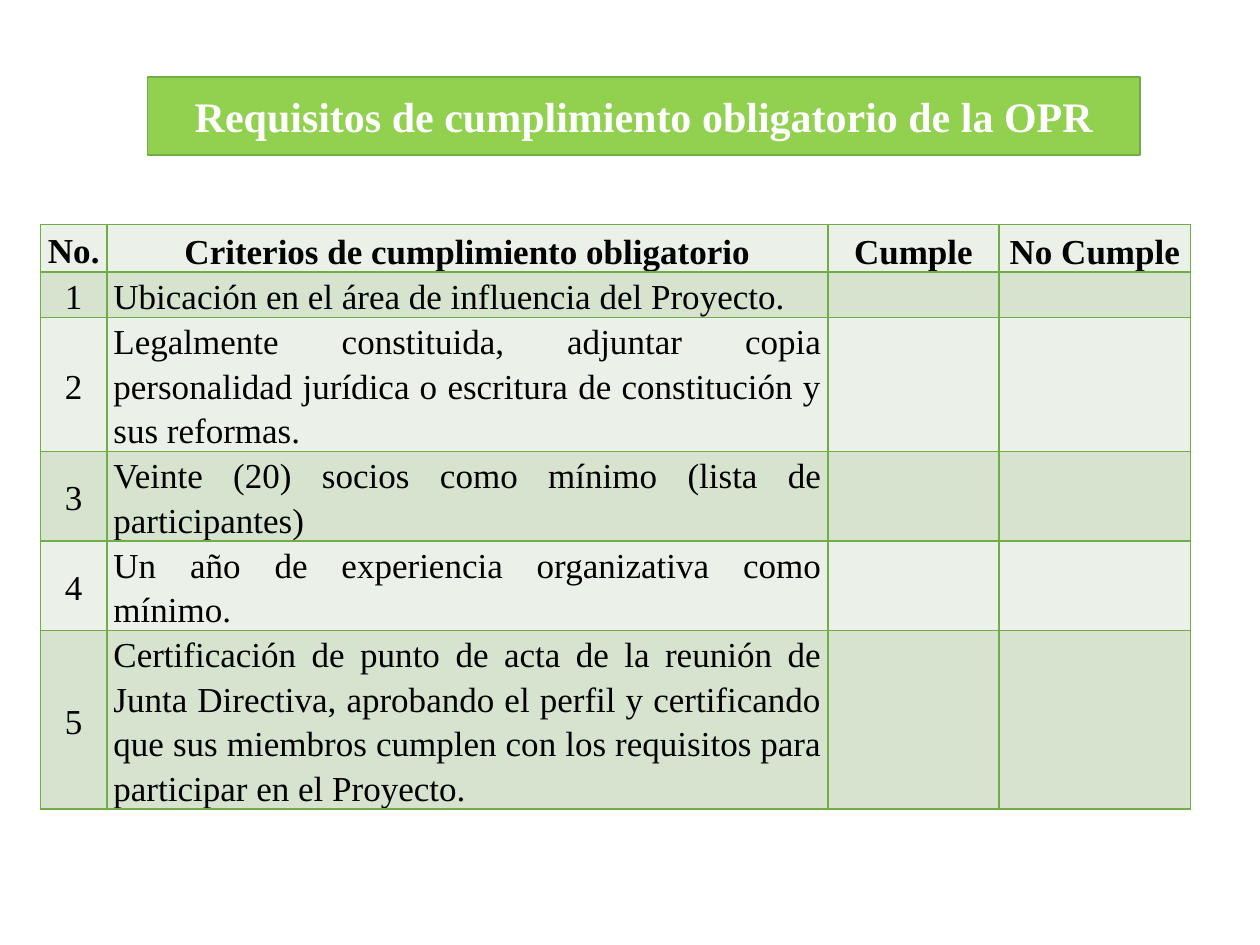
from lxml import etree
from pptx import Presentation
from pptx.dml.color import RGBColor
from pptx.enum import text as t
from pptx.oxml.ns import qn
from pptx.util import Inches, Pt

FONT = "Times New Roman"
BLACK = RGBColor(0x00, 0x00, 0x00)
WHITE = RGBColor(0xFF, 0xFF, 0xFF)
LIME = RGBColor(0x92, 0xD0, 0x50)
GREEN = RGBColor(0x70, 0xAD, 0x47)
PALE = RGBColor(0xEB, 0xF1, 0xE9)
SAGE = RGBColor(0xD5, 0xE3, 0xCF)

CENTER, JUSTIFY = t.PP_ALIGN.CENTER, t.PP_ALIGN.JUSTIFY
MIDDLE, BOTTOM = t.MSO_ANCHOR.MIDDLE, t.MSO_ANCHOR.BOTTOM

WIDTHS = [0.53, 5.72, 1.36, 1.52]
HEIGHTS = [0.38, 0.36, 1.06, 0.71, 0.71, 1.41]
HEADS = ["No.", "Criterios de cumplimiento obligatorio", "Cumple", "No Cumple"]
RULES = [
    "Ubicación en el área de influencia del Proyecto.",
    "Legalmente constituida, adjuntar copia personalidad jurídica o "
    "escritura de constitución y sus reformas.",
    "Veinte (20) socios como mínimo (lista de participantes)",
    "Un año de experiencia organizativa como mínimo.",
    "Certificación de punto de acta de la reunión de Junta Directiva, "
    "aprobando el perfil y certificando que sus miembros cumplen con los "
    "requisitos para participar en el Proyecto.",
]


def write(frame, words, size=20, color=BLACK, bold=False, align=CENTER,
          lead=None, after=None):
    para = frame.paragraphs[0]
    para.alignment = align
    para.line_spacing = lead
    if after is not None:
        para.space_after = Pt(after)
    run = para.add_run()
    run.text = words
    font = run.font
    font.name, font.size, font.bold = FONT, Pt(size), bold
    font.color.rgb = color


def edge(cell):
    """Draw a thin green line on all four sides of a cell."""
    props = cell._tc.get_or_add_tcPr()
    for spot, side in enumerate(("lnL", "lnR", "lnT", "lnB")):
        line = etree.Element(qn(f"a:{side}"), w=str(Pt(1)))
        fill = etree.SubElement(line, qn("a:solidFill"))
        etree.SubElement(fill, qn("a:srgbClr"), val=str(GREEN))
        props.insert(spot, line)


def banner(slide, left, top, width, height):
    """Turn the title placeholder into a bar with snipped corners."""
    title = slide.shapes.title
    title.left, title.top = Inches(left), Inches(top)
    title.width, title.height = Inches(width), Inches(height)
    shape = etree.SubElement(title._element.spPr, qn("a:prstGeom"),
                             prst="snip2DiagRect")
    etree.SubElement(shape, qn("a:avLst"))
    title.fill.solid()
    title.fill.fore_color.rgb = LIME
    title.line.color.rgb = GREEN
    title.line.width = Pt(1)
    frame = title.text_frame
    frame.auto_size = t.MSO_AUTO_SIZE.NONE
    frame.vertical_anchor = MIDDLE
    write(frame, "Requisitos de cumplimiento obligatorio de la OPR",
          size=24, color=WHITE, bold=True)


def checklist(slide, left, top):
    rows = [HEADS] + [[str(n), rule, "", ""] for n, rule in enumerate(RULES, 1)]
    grid = slide.shapes.add_table(
        len(rows), len(HEADS), Inches(left), Inches(top),
        Inches(sum(WIDTHS)), Inches(sum(HEIGHTS))).table
    for col, width in zip(grid.columns, WIDTHS):
        col.width = Inches(width)
    for r, (row, height) in enumerate(zip(rows, HEIGHTS)):
        grid.rows[r].height = Inches(height)
        for c, words in enumerate(row):
            cell = grid.cell(r, c)
            cell.margin_left = cell.margin_right = Inches(0.05)
            cell.margin_top = cell.margin_bottom = 0
            cell.vertical_anchor = BOTTOM if c else MIDDLE
            cell.fill.solid()
            cell.fill.fore_color.rgb = SAGE if r % 2 else PALE
            edge(cell)
            if words:
                write(cell.text_frame, words, bold=r == 0, lead=1.15,
                      align=JUSTIFY if r and c else CENTER,
                      after=9 if r else 6)


def main():
    deck = Presentation()
    deck.slide_width, deck.slide_height = Inches(10), Inches(7.5)
    slide = deck.slides.add_slide(deck.slide_layouts.get_by_name("Title Only"))
    checklist(slide, 0.32, 1.78)
    banner(slide, 1.17, 0.61, 7.88, 0.62)
    deck.save("out.pptx")


if __name__ == "__main__":
    main()
